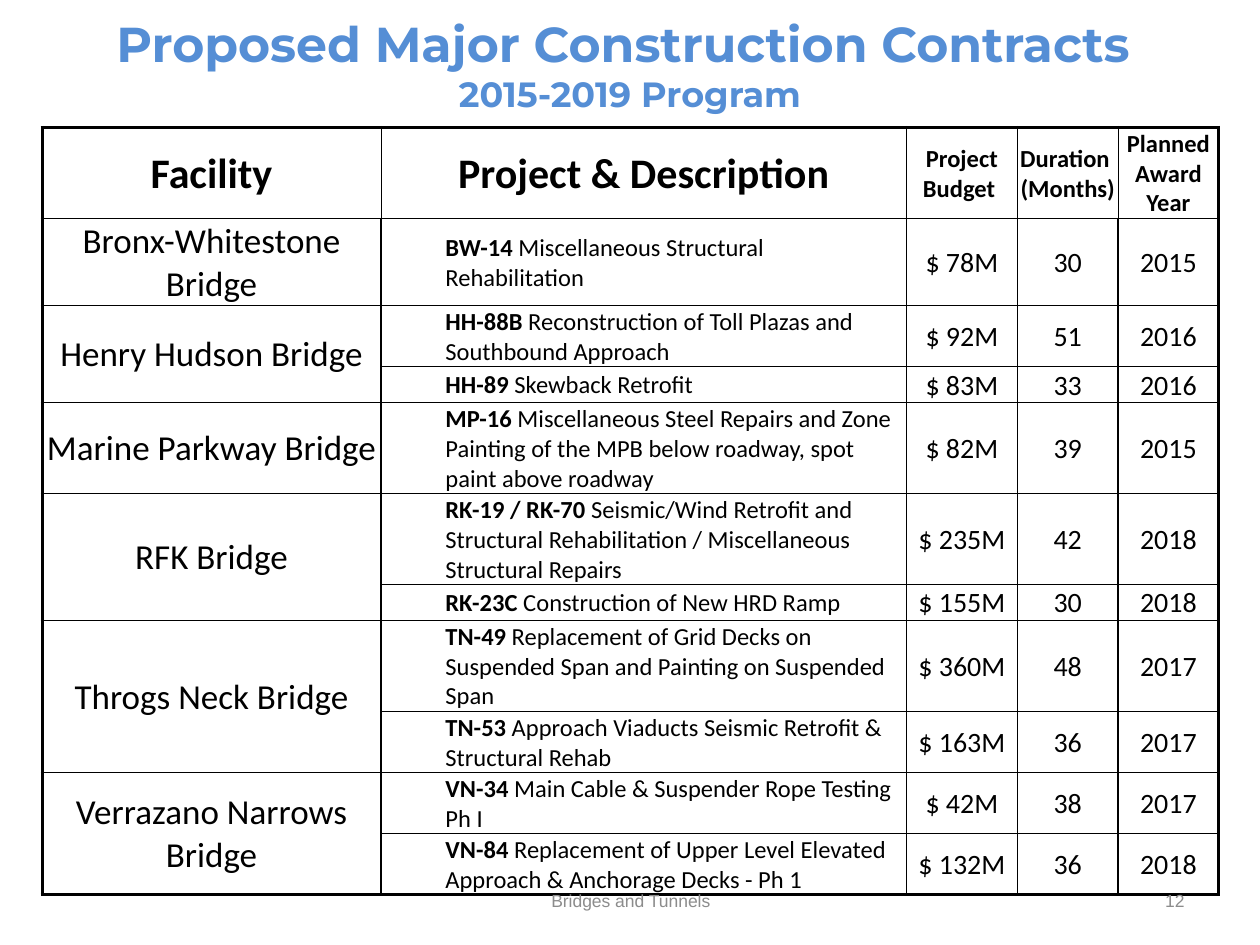
from lxml.etree import SubElement
from pptx import Presentation
from pptx.dml.color import RGBColor
from pptx.enum.text import MSO_ANCHOR as Anchor, MSO_AUTO_SIZE as AutoSize, PP_ALIGN as Align
from pptx.oxml.ns import qn
from pptx.util import Cm, Pt

TITLE = [("Proposed Major Construction Contracts ", 28), ("2015-2019 Program", 20)]
HEADERS = [
    ("Facility", 24),
    ("Project & Description", 24),
    ("Project Budget ", 14),
    ("Duration \v(Months)", 14),
    ("Planned Award Year", 14),
]
FACILITIES = [
    ("Bronx-Whitestone Bridge", [
        ("BW-14", "Miscellaneous Structural Rehabilitation", "$ 78M", "30", "2015", 1.7),
    ]),
    ("Henry Hudson Bridge", [
        ("HH-88B", "Reconstruction of Toll Plazas and Southbound Approach", "$ 92M", "51", "2016", 1.2),
        ("HH-89", "Skewback Retrofit", "$ 83M", "33", "2016", 0.71),
    ]),
    ("Marine Parkway Bridge", [
        ("MP-16", "Miscellaneous Steel Repairs and Zone Painting of the MPB below roadway, "
         "spot paint above roadway", "$ 82M", "39", "2015", 1.8),
    ]),
    ("RFK Bridge", [
        ("RK-19 / RK-70", "Seismic/Wind Retrofit and Structural Rehabilitation / "
         "Miscellaneous Structural Repairs", "$ 235M", "42", "2018", 1.8),
        ("RK-23C", "Construction of New HRD Ramp", "$ 155M", "30", "2018", 0.71),
    ]),
    ("Throgs Neck Bridge", [
        ("TN-49", "Replacement of Grid Decks on Suspended Span and Painting on Suspended Span",
         "$ 360M", "48", "2017", 1.8),
        ("TN-53", "Approach Viaducts Seismic Retrofit & Structural Rehab", "$ 163M", "36", "2017", 1.2),
    ]),
    ("Verrazano Narrows Bridge", [
        ("VN-34", "Main Cable & Suspender Rope Testing Ph I", "$ 42M", "38", "2017", 1.2),
        ("VN-84", "Replacement of Upper Level Elevated Approach & Anchorage Decks - Ph 1",
         "$ 132M", "36", "2018", 1.2),
    ]),
]
FOOTERS = [
    ("Bridges and Tunnels", 8.69, 8.05, Align.CENTER),
    ("12", 18.21, 5.92, Align.RIGHT),
]
COLUMN_WIDTHS = [6.83, 10.59, 2.24, 2.03, 2.03]
HEADER_HEIGHT = 1.8
CELL_FORMAT = {
    "vertical_anchor": Anchor.MIDDLE,
    "margin_left": Cm(0.03),
    "margin_right": Cm(0.03),
    "margin_top": Cm(0.03),
    "margin_bottom": 0,
}


def color(value):
    return RGBColor.from_string(value)


def apply(target, values):
    for name, value in values.items():
        setattr(target, name, value)


def add_run(paragraph, text, size, bold=False, font="Calibri", shade="000000"):
    for index, line in enumerate(text.split("\v")):
        if index:
            paragraph.add_line_break()
        run = paragraph.add_run()
        run.text = line
        apply(run.font, {"name": font, "size": Pt(size), "bold": bold})
        run.font.color.rgb = color(shade)


def fill_cell(cell, runs, align=Align.CENTER):
    paragraph = cell.text_frame.paragraphs[0]
    paragraph.alignment = align
    for run in runs:
        add_run(paragraph, *run)


def add_border(cell, side, width):
    properties = cell._tc.get_or_add_tcPr()
    line = SubElement(properties, qn(f"a:ln{side}"), w=str(Pt(width)))
    fill = SubElement(line, qn("a:solidFill"))
    SubElement(fill, qn("a:srgbClr"), val="000000")


def horizontal_width(edge, row_count):
    return 2 if edge in (0, row_count) else 1 if edge == 1 else 0.5


def vertical_width(edge, row, column_count):
    return 2 if edge in (0, column_count) else 0.5 if row == 0 else 1


def add_title(slide):
    title = slide.shapes.title
    apply(title, {"left": Cm(0.85), "top": Cm(0.15), "width": Cm(23.7), "height": Cm(2.31)})
    frame = title.text_frame
    apply(frame, {"auto_size": AutoSize.NONE, "vertical_anchor": Anchor.TOP, "word_wrap": True})
    for index, (text, size) in enumerate(TITLE):
        paragraph = frame.add_paragraph() if index else frame.paragraphs[0]
        paragraph.alignment = Align.CENTER
        add_run(paragraph, text, size, True, "Montserrat", "558ED5")


def add_contracts(slide):
    heights = [HEADER_HEIGHT] + [project[-1] for _, projects in FACILITIES for project in projects]
    row_count, column_count = len(heights), len(COLUMN_WIDTHS)
    table = slide.shapes.add_table(
        row_count, column_count, Cm(0.85), Cm(2.57), Cm(sum(COLUMN_WIDTHS)), Cm(sum(heights))
    ).table
    apply(table, {"first_row": False, "horz_banding": False})
    for column, width in zip(table.columns, COLUMN_WIDTHS):
        column.width = Cm(width)
    for row, height in zip(table.rows, heights):
        row.height = Cm(height)

    for column, (text, size) in enumerate(HEADERS):
        fill_cell(table.cell(0, column), [(text, size, True)])
    row = 1
    for facility, projects in FACILITIES:
        first = table.cell(row, 0)
        if len(projects) > 1:
            first.merge(table.cell(row + len(projects) - 1, 0))
        fill_cell(first, [(facility, 20)])
        for code, description, *figures, _ in projects:
            cell = table.cell(row, 1)
            cell.text_frame.paragraphs[0]._p.get_or_add_pPr().set("marL", str(Cm(1.27)))
            fill_cell(cell, [(code, 14, True), (f" {description}", 14)], Align.LEFT)
            for column, figure in enumerate(figures, 2):
                fill_cell(table.cell(row, column), [(figure, 16)])
            row += 1

    for row in range(row_count):
        for column in range(column_count):
            cell = table.cell(row, column)
            apply(cell, CELL_FORMAT)
            bottom = row + (cell.span_height if cell.is_merge_origin else 1)
            add_border(cell, "L", vertical_width(column, row, column_count))
            add_border(cell, "R", vertical_width(column + 1, row, column_count))
            add_border(cell, "T", horizontal_width(row, row_count))
            add_border(cell, "B", horizontal_width(bottom, row_count))
            cell.fill.background()


def add_footers(slide):
    for text, left, width, align in FOOTERS:
        frame = slide.shapes.add_textbox(Cm(left), Cm(17.65), Cm(width), Cm(1.02)).text_frame
        apply(frame, {"word_wrap": True, "vertical_anchor": Anchor.MIDDLE})
        frame.paragraphs[0].alignment = align
        add_run(frame.paragraphs[0], text, 10, False, "Arial", "8C8C8C")


def main():
    presentation = Presentation()
    apply(presentation, {"slide_width": Cm(25.4), "slide_height": Cm(19.05)})
    slide = presentation.slides.add_slide(presentation.slide_layouts[5])
    add_title(slide)
    add_contracts(slide)
    add_footers(slide)
    presentation.save("out.pptx")


if __name__ == "__main__":
    main()
